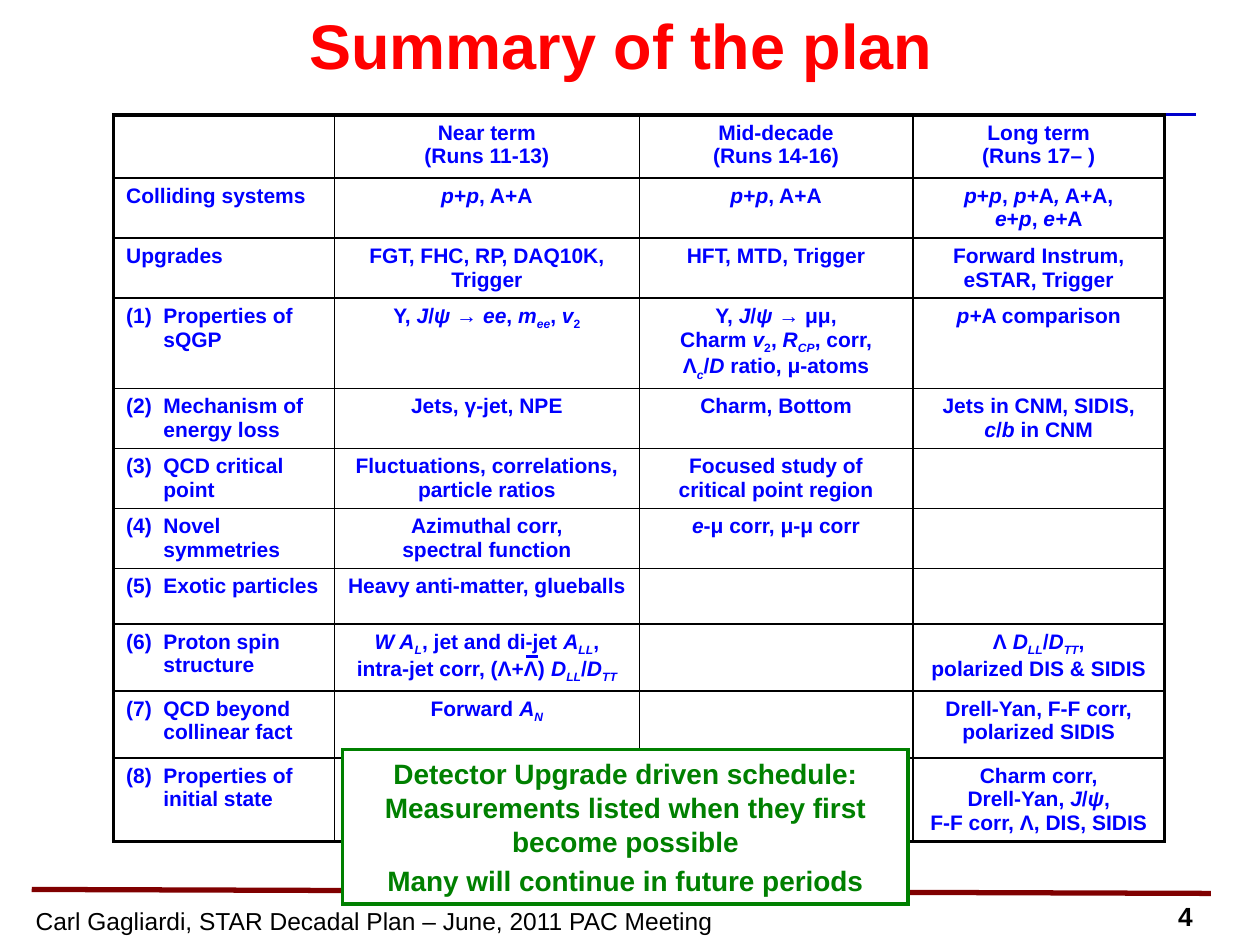
from lxml import etree
from pptx import Presentation
from pptx import util as u
from pptx.dml.color import RGBColor
from pptx.enum import shapes, text
from pptx.oxml import ns

BLACK = RGBColor(0x00, 0x00, 0x00)
WHITE = RGBColor(0xFF, 0xFF, 0xFF)
RED = RGBColor(0xFF, 0x00, 0x00)
BLUE = RGBColor(0x00, 0x00, 0xFF)
NAVY = RGBColor(0x00, 0x00, 0xCC)
MAROON = RGBColor(0x80, 0x00, 0x00)
GREEN = RGBColor(0x00, 0x80, 0x00)

FONT = "Arial"
ITALIC_MARK, SUBSCRIPT_MARK = "*", "~"
LABEL_INDENT = u.Cm(0.75)
OUTER, INNER = u.Pt(2.25), u.Pt(1)
COLUMN_WIDTHS = [4.45, 6.15, 5.51, 5.08]
ROW_HEIGHTS = [1.27, 1.21, 1.21, 1.82, 1.21, 1.21, 1.21, 1.12, 1.35, 1.35, 1.68]

PLAN = [
    ["", "Near term\n(Runs 11-13)", "Mid-decade\n(Runs 14-16)",
     "Long term\n(Runs 17– )"],
    ["Colliding systems", "*p*+*p*, A+A", "*p*+*p*, A+A",
     "*p*+*p*, *p+*A*,* A+A,\n*e*+*p*, *e+*A"],
    ["Upgrades", "FGT, FHC, RP, DAQ10K, Trigger", "HFT, MTD, Trigger",
     "Forward Instrum, eSTAR, Trigger"],
    ["(1)\tProperties of\nsQGP",
     "Υ, *J*/*ψ* → *ee*, *m~ee~*, *v*~2~",
     "Υ, *J*/*ψ* → μμ,\nCharm *v*~2~, *R~CP~*, corr,\nΛ*~c~*/*D* ratio, μ-atoms",
     "*p+*A comparison"],
    ["(2)\tMechanism of\nenergy loss", "Jets, γ-jet, NPE", "Charm, Bottom",
     "Jets in CNM, SIDIS, *c*/*b* in CNM"],
    ["(3)\tQCD critical\npoint", "Fluctuations, correlations, particle ratios",
     "Focused study of\ncritical point region", ""],
    ["(4)\tNovel\nsymmetries", "Azimuthal corr,\nspectral function",
     "*e*-μ corr, μ-μ corr", ""],
    ["(5)\tExotic particles", "Heavy anti-matter, glueballs", "", ""],
    ["(6)\tProton spin\nstructure",
     "*W A~L~*, jet and di-jet *A~LL~*,\nintra-jet corr, (Λ+Λ) *D~LL~*/*D~TT~*",
     "", "Λ *D~LL~*/*D~TT~*,\npolarized DIS & SIDIS"],
    ["(7)\tQCD beyond\ncollinear fact", "Forward *A~N~*", "",
     "Drell-Yan, F-F corr,\npolarized SIDIS"],
    ["(8)\tProperties of\ninitial state", "", "",
     "Charm corr,\nDrell-Yan, *J*/*ψ*,\nF-F corr, Λ, DIS, SIDIS"],
]


def format_span(span, size, color, bold=True):
    span.font.name = FONT
    span.font.size = u.Pt(size)
    span.font.bold = bold
    span.font.color.rgb = color


def format_frame(frame, size, color, bold=True, align=text.PP_ALIGN.CENTER):
    frame.word_wrap = True
    for para in frame.paragraphs:
        para.alignment = align
        for span in para.runs:
            format_span(span, size, color, bold)


def add_rule(page, start, end, color, width):
    points = [u.Cm(value) for value in (*start, *end)]
    rule = page.shapes.add_connector(shapes.MSO_CONNECTOR.STRAIGHT, *points)
    rule.line.color.rgb = color
    rule.line.width = u.Pt(width)
    etree.SubElement(rule._element.spPr, ns.qn("a:effectLst"))


def add_label(page, bounds, words, size, bold, align):
    box = page.shapes.add_textbox(*[u.Cm(value) for value in bounds])
    box.text_frame.text = words
    format_frame(box.text_frame, size, BLACK, bold, align)


def add_title(page, words):
    box = page.shapes.title
    box.left, box.top, box.width, box.height = [
        u.Cm(value) for value in (1.09, 0, 22.86, 1.93)]
    box.text_frame.text = words
    box.text_frame.vertical_anchor = text.MSO_ANCHOR.TOP
    format_frame(box.text_frame, 36, RED)


def write_marked(para, line):
    for i, slanted in enumerate(line.split(ITALIC_MARK)):
        for j, words in enumerate(slanted.split(SUBSCRIPT_MARK)):
            if words:
                span = para.add_run()
                span.text = words
                format_span(span, 12, BLUE)
                span.font.italic = i % 2 == 1
                if j % 2:
                    span._r.get_or_add_rPr().set("baseline", "-25000")


def indent_label(para, is_first):
    properties = para._p.get_or_add_pPr()
    if is_first:
        tabs = etree.SubElement(properties, ns.qn("a:tabLst"))
        etree.SubElement(tabs, ns.qn("a:tab"), pos=str(LABEL_INDENT), algn="l")
    else:
        properties.set("marL", str(LABEL_INDENT))


def set_borders(cell, widths):
    properties = cell._tc.get_or_add_tcPr()
    for side, width in zip("LRTB", widths):
        border = etree.SubElement(properties, ns.qn(f"a:ln{side}"), w=str(width))
        fill = etree.SubElement(border, ns.qn("a:solidFill"))
        etree.SubElement(fill, ns.qn("a:srgbClr"), val=str(BLACK))
    cell.fill.background()


def fill_cell(cell, words, is_label):
    cell.margin_bottom = 0
    frame = cell.text_frame
    for index, line in enumerate(words.split("\n")):
        para = frame.add_paragraph() if index else frame.paragraphs[0]
        if is_label:
            indent_label(para, index == 0)
        para.alignment = text.PP_ALIGN.LEFT if is_label else text.PP_ALIGN.CENTER
        write_marked(para, line)


def add_plan_table(page):
    last_row, last_column = len(PLAN) - 1, len(COLUMN_WIDTHS) - 1
    table = page.shapes.add_table(
        len(PLAN), len(COLUMN_WIDTHS), u.Cm(2.29), u.Cm(2.32),
        u.Cm(sum(COLUMN_WIDTHS)), u.Cm(sum(ROW_HEIGHTS))).table
    table.first_row = table.horz_banding = False
    for column, width in zip(table.columns, COLUMN_WIDTHS):
        column.width = u.Cm(width)
    for r, (height, entries) in enumerate(zip(ROW_HEIGHTS, PLAN)):
        table.rows[r].height = u.Cm(height)
        for c, words in enumerate(entries):
            cell = table.cell(r, c)
            edges = (c == 0, c == last_column, r == 0, r == last_row)
            set_borders(cell, [OUTER if edge else INNER for edge in edges])
            fill_cell(cell, words, c == 0)


def add_callout(page):
    box = page.shapes.add_shape(
        shapes.MSO_SHAPE.RECTANGLE,
        u.Cm(6.91), u.Cm(15.11), u.Cm(11.4), u.Cm(3.12))
    box.shadow.inherit = False
    box.fill.solid()
    box.fill.fore_color.rgb = WHITE
    box.line.color.rgb = GREEN
    box.line.width = u.Pt(2)
    outline = box._element.spPr.find(ns.qn("a:ln"))
    etree.SubElement(outline, ns.qn("a:miter"), lim="800000")
    frame = box.text_frame
    frame.text = ("Detector Upgrade driven schedule:\v"
                  "Measurements listed when they first become possible\n"
                  "Many will continue in future periods")
    frame.vertical_anchor = text.MSO_ANCHOR.MIDDLE
    format_frame(frame, 16, GREEN)
    frame.paragraphs[1].space_before = u.Pt(3.2)


def main():
    deck = Presentation()
    deck.slide_width, deck.slide_height = u.Cm(25.4), u.Cm(19.05)
    page = deck.slides.add_slide(deck.slide_layouts[5])
    add_rule(page, (2.92, 2.31), (24.1, 2.31), NAVY, 2)
    add_label(page, (23.5, 18.03, 1.6, 0.89), "4", 15, True, text.PP_ALIGN.LEFT)
    add_rule(page, (0.64, 17.93), (24.41, 18.01), MAROON, 3)
    add_title(page, "Summary of the plan")
    add_plan_table(page)
    add_callout(page)
    add_rule(page, (10.6, 13.23), (10.84, 13.23), BLUE, 1.5)
    add_label(page, (0, 18.14, 15.09, 0.91),
              "Carl Gagliardi, STAR Decadal Plan – June, 2011 PAC Meeting",
              14, False, text.PP_ALIGN.CENTER)
    deck.save("out.pptx")


if __name__ == "__main__":
    main()
